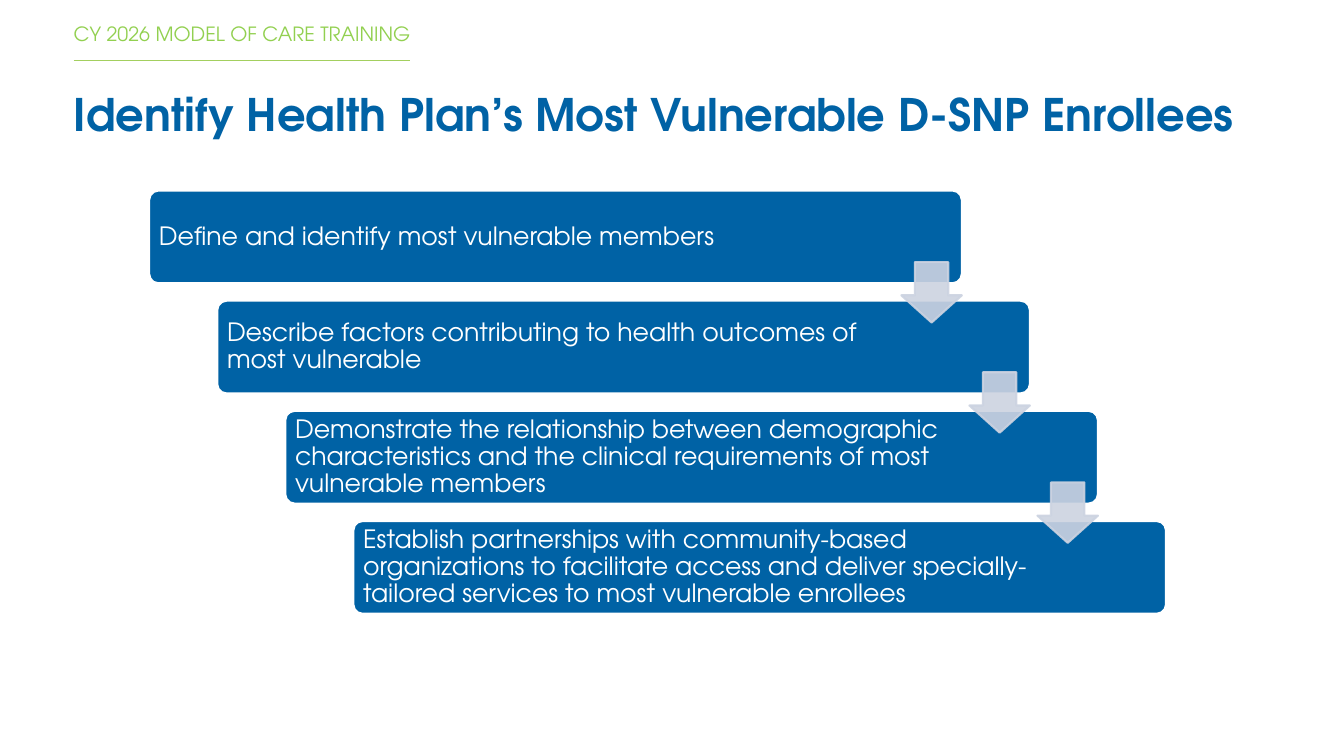
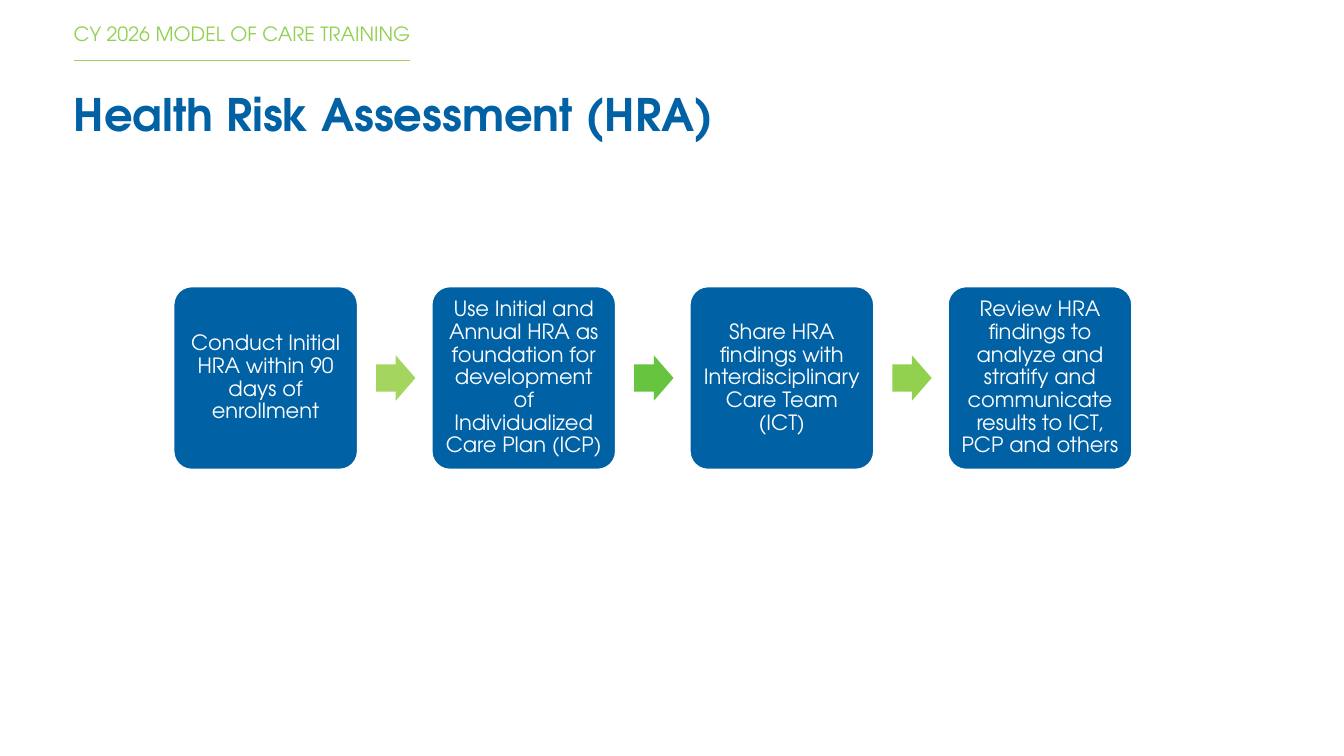
from dataclasses import dataclass

from lxml import etree
from pptx import Presentation
from pptx.dml.color import RGBColor
from pptx.enum import shapes, text
from pptx.oxml import ns
from pptx.util import Inches, Pt


# Theme: colours, type and sizes shared by both slides
@dataclass(frozen=True)
class Theme:
    font: str = "TeX Gyre Adventor"
    blue: str = "0062A5"
    white: str = "FFFFFF"
    eyebrow: str = "92D050"
    rule: str = "A3CF5F"
    step_arrow: str = "CCD3E1"
    eyebrow_size: float = 14
    title_size: float = 32
    step_size: float = 18
    card_size: float = 15
    outline: float = 1.5
    margin: float = 0.73


@dataclass(frozen=True)
class Area:
    left: float
    top: float
    width: float
    height: float

    def lengths(self) -> list:
        return [Inches(v) for v in (self.left, self.top, self.width, self.height)]


@dataclass(frozen=True)
class BoxStyle:
    size: float
    align: text.PP_ALIGN
    insets: tuple[float, float, float, float]


@dataclass(frozen=True)
class Arrow:
    preset: shapes.MSO_SHAPE
    adjustments: tuple[float, float]


THEME = Theme()
STEP = BoxStyle(THEME.step_size, text.PP_ALIGN.LEFT, (0.07, 0, 1.34, 0))
CARD = BoxStyle(THEME.card_size, text.PP_ALIGN.CENTER, (0.06, 0.05, 0.06, 0.05))
DOWN = Arrow(shapes.MSO_SHAPE.DOWN_ARROW, (0.55, 0.45))
RIGHT = Arrow(shapes.MSO_SHAPE.RIGHT_ARROW, (0.6, 0.5))

EYEBROW = "CY 2026 MODEL OF CARE TRAINING"
STEPS = (
    "Define and identify most vulnerable members",
    "Describe factors contributing to health outcomes of most vulnerable",
    "Demonstrate the relationship between demographic characteristics and the "
    "clinical requirements of most vulnerable members",
    "Establish partnerships with community-based organizations to facilitate access "
    "and deliver specially-tailored services to most vulnerable enrollees",
)
CARDS = (
    "Conduct Initial HRA within 90 days of enrollment",
    "Use Initial and Annual HRA as foundation for development of "
    "Individualized Care Plan (ICP)",
    "Share HRA findings with Interdisciplinary Care Team (ICT)",
    "Review HRA findings to analyze and stratify and communicate results to ICT, "
    "PCP and others",
)
CARD_ARROW_COLORS = ("A3D55F", "67C43E", "92D050")


def rgb(color: str) -> RGBColor:
    return RGBColor.from_string(color)


def write(frame, wording: str, size: float, color: str, align, anchor,
          insets=(0, 0, 0, 0), spacing: float = 1.0, bold: bool = False) -> None:
    """Format a text frame and fill it with one paragraph."""
    frame.word_wrap = True
    frame.auto_size = text.MSO_AUTO_SIZE.NONE
    frame.vertical_anchor = anchor
    (frame.margin_left, frame.margin_top,
     frame.margin_right, frame.margin_bottom) = map(Inches, insets)
    paragraph = frame.paragraphs[0]
    paragraph.alignment = align
    paragraph.line_spacing = spacing
    paragraph.space_before = Pt(0)
    run = paragraph.add_run()
    run.text = wording
    run.font.name = THEME.font
    run.font.size = Pt(size)
    run.font.bold = bold
    run.font.color.rgb = rgb(color)


def place(shape, area: Area) -> None:
    shape.left, shape.top, shape.width, shape.height = area.lengths()


def add_base_slide(deck, heading: str):
    """Add a slide with the eyebrow, its rule and the title."""
    slide = deck.slides.add_slide(deck.slide_layouts[1])
    title, eyebrow = slide.shapes.title, slide.placeholders[1]

    rule = slide.shapes.add_connector(
        shapes.MSO_CONNECTOR.STRAIGHT,
        Inches(THEME.margin), Inches(0.6), Inches(4.07), Inches(0.6))
    rule.line.color.rgb = rgb(THEME.rule)
    rule.line.width = Pt(1)
    etree.SubElement(rule.element.spPr, ns.qn("a:effectLst"))

    place(eyebrow, Area(THEME.margin, 0.11, 4.16, 0.48))
    properties = eyebrow.text_frame.paragraphs[0]._p.get_or_add_pPr()
    properties.set("marL", "0")
    properties.set("indent", "0")
    etree.SubElement(properties, ns.qn("a:buNone"))
    write(eyebrow.text_frame, EYEBROW, THEME.eyebrow_size, THEME.eyebrow,
          text.PP_ALIGN.LEFT, text.MSO_ANCHOR.MIDDLE, spacing=0.9)

    place(title, Area(THEME.margin, 0.86, 11.6, 0.69))
    write(title.text_frame, heading, THEME.title_size, THEME.blue,
          text.PP_ALIGN.LEFT, text.MSO_ANCHOR.TOP, bold=True)
    return slide


def add_box(slide, area: Area, wording: str, style: BoxStyle) -> None:
    box = slide.shapes.add_shape(
        shapes.MSO_SHAPE.ROUNDED_RECTANGLE, *area.lengths())
    box.adjustments[0] = 0.1
    box.shadow.inherit = False
    box.fill.solid()
    box.fill.fore_color.rgb = rgb(THEME.blue)
    box.line.color.rgb = rgb(THEME.white)
    box.line.width = Pt(THEME.outline)
    write(box.text_frame, wording, style.size, THEME.white, style.align,
          text.MSO_ANCHOR.MIDDLE, style.insets, spacing=0.9)


def add_arrow(slide, area: Area, kind: Arrow, color: str):
    arrow = slide.shapes.add_shape(kind.preset, *area.lengths())
    for index, value in enumerate(kind.adjustments):
        arrow.adjustments[index] = value
    arrow.shadow.inherit = False
    arrow.fill.solid()
    arrow.fill.fore_color.rgb = rgb(color)
    arrow.line.fill.background()
    return arrow


def add_step_arrow(slide, area: Area) -> None:
    """Add an outlined down arrow at 90% opacity."""
    arrow = add_arrow(slide, area, DOWN, THEME.step_arrow)
    arrow.line.color.rgb = rgb(THEME.step_arrow)
    arrow.line.width = Pt(THEME.outline)
    for color in arrow.element.spPr.iter(ns.qn("a:srgbClr")):
        etree.SubElement(color, ns.qn("a:alpha"), val="90000")


def build_vulnerable_members(deck) -> None:
    slide = add_base_slide(
        deck, "Identify Health Plan’s Most Vulnerable D-SNP Enrollees")
    areas = [Area(1.48 + 0.675 * i, 1.89 + 1.093 * i, 8.06, 0.92)
             for i in range(len(STEPS))]
    for area, wording in zip(areas, STEPS):
        add_box(slide, area, wording, STEP)
    # Arrows sit over the lower right corner of each step but the last
    side = 0.6
    for area in areas[:-1]:
        add_step_arrow(slide, Area(area.left + area.width - side,
                                   area.top + 0.71, side, side))


def build_risk_assessment(deck) -> None:
    slide = add_base_slide(deck, "Health Risk Assessment (HRA)")
    areas = [Area(1.72 + 2.56 * i, 2.84, 1.83, 1.82) for i in range(len(CARDS))]
    for area, wording in zip(areas, CARDS):
        add_box(slide, area, wording, CARD)
    # Arrows are centred on the height of the cards
    width, height = 0.39, 0.45
    for area, color in zip(areas, CARD_ARROW_COLORS):
        add_arrow(slide, Area(area.left + area.width + 0.18,
                              area.top + (area.height - height) / 2,
                              width, height), RIGHT, color)


def main() -> None:
    deck = Presentation()
    deck.slide_width, deck.slide_height = Inches(13.33), Inches(7.5)
    build_vulnerable_members(deck)
    build_risk_assessment(deck)
    deck.save("out.pptx")


if __name__ == "__main__":
    main()
